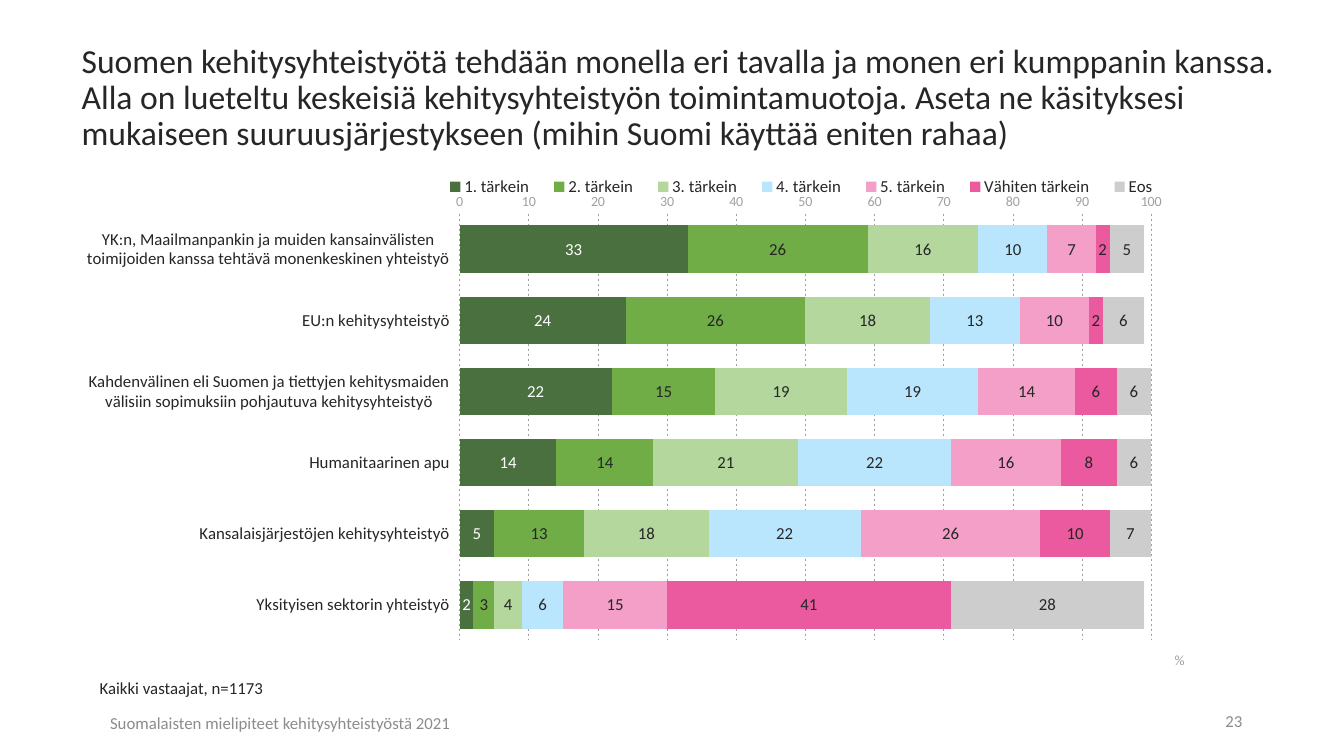
from pptx import Presentation
from pptx import util as u
from pptx.chart.data import CategoryChartData
from pptx.dml.color import RGBColor
from pptx.enum import chart as ch, dml, text
from pptx.oxml import parse_xml
from pptx.oxml.ns import nsdecls, qn

INK, GREY, AXIS_GREY = "262626", "8C8C8C", "A0A0A0"

PARTNERS = [
    "YK:n, Maailmanpankin ja muiden kansainvälisten toimijoiden kanssa tehtävä monenkeskinen yhteistyö",
    "EU:n kehitysyhteistyö",
    "Kahdenvälinen eli Suomen ja tiettyjen kehitysmaiden välisiin sopimuksiin pohjautuva kehitysyhteistyö",
    "Humanitaarinen apu",
    "Kansalaisjärjestöjen kehitysyhteistyö",
    "Yksityisen sektorin yhteistyö",
]
RANKS = [
    ("1. tärkein", "4A7040", "FFFFFF", (33, 24, 22, 14, 5, 2)),
    ("2. tärkein", "70AD47", INK, (26, 26, 15, 14, 13, 3)),
    ("3. tärkein", "B3D79D", INK, (16, 18, 19, 21, 18, 4)),
    ("4. tärkein", "B9E6FD", INK, (10, 13, 19, 22, 22, 6)),
    ("5. tärkein", "F39FC7", INK, (7, 10, 14, 16, 26, 15)),
    ("Vähiten tärkein", "EB599E", INK, (2, 2, 6, 8, 10, 41)),
    ("Eos", "CDCDCD", INK, (5, 6, 6, 6, 7, 28)),
]


def rgb(value):
    return RGBColor.from_string(value)


def style(font, size, color):
    font.name = "Calibri"
    font.size = u.Pt(size)
    font.bold = False
    font.color.rgb = rgb(color)


def arrange(part, x, y, w=None, h=None, inner=False):
    for old in part.findall(qn("c:layout")):
        part.remove(old)
    target = '<c:layoutTarget val="inner"/>' if inner else ""
    modes = '<c:xMode val="edge"/><c:yMode val="edge"/>'
    sizes = "".join(f'<c:{key} val="{value}"/>'
                    for key, value in zip("xywh", (x, y, w, h)) if value is not None)
    layout = parse_xml(f'<c:layout {nsdecls("c")}><c:manualLayout>{target}{modes}{sizes}'
                       '</c:manualLayout></c:layout>')
    before = [child for child in part if child.tag in (qn("c:tx"), qn("c:legendPos"))]
    part.insert(len(before), layout)


def add_question(slide, box):
    question = slide.shapes.title
    question.left, question.top, question.width, question.height = map(u.Inches, box)
    frame = question.text_frame
    frame.text = ("Suomen kehitysyhteistyötä tehdään monella eri tavalla ja monen eri kumppanin kanssa. "
                  "Alla on lueteltu keskeisiä kehitysyhteistyön toimintamuotoja. Aseta ne käsityksesi "
                  "mukaiseen suuruusjärjestykseen (mihin Suomi käyttää eniten rahaa)")
    frame.word_wrap = True
    frame.auto_size = text.MSO_AUTO_SIZE.NONE
    frame.vertical_anchor = text.MSO_ANCHOR.MIDDLE
    paragraph = frame.paragraphs[0]
    paragraph.alignment = text.PP_ALIGN.LEFT
    paragraph.line_spacing = 0.9
    style(paragraph.font, 24, INK)


def style_partner_axis(axis):
    axis.reverse_order = True
    axis.crosses = ch.XL_AXIS_CROSSES.MAXIMUM
    axis.tick_label_position = ch.XL_TICK_LABEL_POSITION.LOW
    axis.major_tick_mark = ch.XL_TICK_MARK.NONE
    axis.format.line.fill.background()
    style(axis.tick_labels.font, 12, INK)


def style_percent_axis(axis):
    axis.minimum_scale, axis.maximum_scale, axis.major_unit = 0, 100.01, 10
    axis.major_tick_mark = ch.XL_TICK_MARK.NONE
    axis.format.line.fill.background()
    axis.tick_labels.number_format = "General"
    axis.tick_labels.number_format_is_linked = False
    style(axis.tick_labels.font, 10, AXIS_GREY)
    grid = axis.major_gridlines.format.line
    grid.color.rgb = rgb(AXIS_GREY)
    grid.width = u.Pt(0.5)
    grid.dash_style = dml.MSO_LINE.DASH
    unit = axis.axis_title
    unit.text_frame.text = "%"
    style(unit.text_frame.paragraphs[0].font, 10, AXIS_GREY)
    arrange(axis.axis_title._element, 0.95, 0.95)


def add_ranking_chart(slide, box):
    data = CategoryChartData()
    data.categories = PARTNERS
    for name, _, _, shares in RANKS:
        data.add_series(name, shares)
    chart = slide.shapes.add_chart(ch.XL_CHART_TYPE.BAR_STACKED, *map(u.Inches, box), data).chart
    chart.has_title = False
    style(chart.font, 12, "000000")
    style_partner_axis(chart.category_axis)
    style_percent_axis(chart.value_axis)

    plot = chart.plots[0]
    plot.gap_width, plot.overlap, plot.vary_by_categories = 50, 100, False
    for rank, (_, color, label_color, _) in zip(plot.series, RANKS):
        rank.format.fill.solid()
        rank.format.fill.fore_color.rgb = rgb(color)
        labels = rank.data_labels
        labels.show_value = True
        labels.number_format = "#,##0"
        labels.number_format_is_linked = False
        labels.position = ch.XL_LABEL_POSITION.CENTER
        style(labels.font, 12, label_color)
    arrange(chart._chartSpace.chart.plotArea, 0.335, 0.126, 0.597, 0.808, inner=True)

    chart.has_legend = True
    legend = chart.legend
    legend.position = ch.XL_LEGEND_POSITION.TOP
    legend.include_in_layout = False
    style(legend.font, 12, INK)
    arrange(legend._element, 0.31, 0.04, 0.64, 0.07)


def add_note(slide, box, words, color, alignment, anchor, spacing=1.0):
    frame = slide.shapes.add_textbox(*map(u.Inches, box)).text_frame
    frame.word_wrap = True
    frame.vertical_anchor = anchor
    frame.text = words
    paragraph = frame.paragraphs[0]
    paragraph.alignment = alignment
    paragraph.line_spacing = spacing
    style(paragraph.font, 12, color)


def add_footer(slide, left, top):
    align, anchor = text.PP_ALIGN, text.MSO_ANCHOR
    add_note(slide, (left + 0.36, top, 9.18, 0.28), "Kaikki vastaajat, n=1173",
             INK, align.LEFT, anchor.TOP, 0.9)
    add_note(slide, (left, top + 0.27, 4.5, 0.4), "Suomalaisten mielipiteet kehitysyhteistyöstä 2021",
             GREY, align.CENTER, anchor.MIDDLE)
    add_note(slide, (left + 8.89, top + 0.25, 3, 0.4), "23", GREY, align.RIGHT, anchor.MIDDLE)


def main():
    deck = Presentation()
    deck.slide_width, deck.slide_height = u.Inches(13.33), u.Inches(7.5)
    slide = deck.slides.add_slide(deck.slide_layouts[5])
    add_question(slide, (0.71, 0.64, 12.07, 0.68))
    add_ranking_chart(slide, (0.71, 1.46, 11.49, 5.24))
    add_footer(slide, 0.53, 6.7)
    deck.save("out.pptx")


if __name__ == "__main__":
    main()
